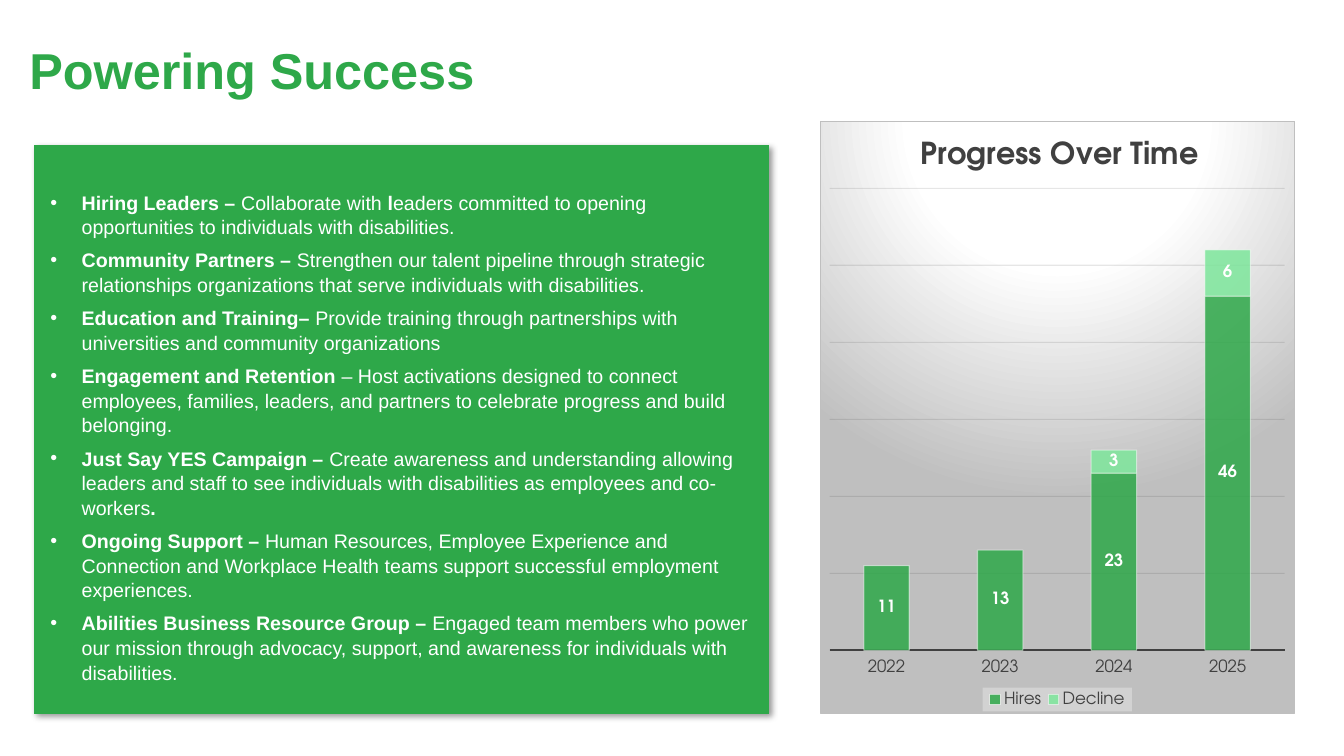
from lxml import etree
from pptx import Presentation
from pptx.chart.data import CategoryChartData
from pptx.dml.color import RGBColor
from pptx.enum.chart import XL_CHART_TYPE, XL_LABEL_POSITION, XL_LEGEND_POSITION, XL_TICK_LABEL_POSITION, XL_TICK_MARK
from pptx.enum.shapes import MSO_SHAPE
from pptx.oxml import parse_xml
from pptx.oxml.ns import nsdecls, qn
from pptx.util import Inches, Pt

STACKED = XL_CHART_TYPE.COLUMN_STACKED
CENTER = XL_LABEL_POSITION.CENTER
BOTTOM = XL_LEGEND_POSITION.BOTTOM
LOW = XL_TICK_LABEL_POSITION.LOW
NO_TICK = XL_TICK_MARK.NONE
PROCESS = MSO_SHAPE.FLOWCHART_PROCESS

GREEN = RGBColor(0x2E, 0xA8, 0x49)
MINT = RGBColor(0x7D, 0xE6, 0x9B)
WHITE = RGBColor(0xFF, 0xFF, 0xFF)
BLACK = RGBColor(0, 0, 0)
CHARCOAL = RGBColor(0x40, 0x40, 0x40)
GRID = RGBColor(0x0D, 0x0D, 0x0D)

TITLE = "Powering Success"
# Runs alternate between bold and regular.
BULLETS = [
    ("Hiring Leaders – ", "Collaborate with ", "l",
     "eaders committed to opening opportunities to individuals with disabilities."),
    ("Community Partners – ",
     "Strengthen our talent pipeline through strategic relationships organizations that serve individuals with disabilities."),
    ("Education and Training– ",
     "Provide training through partnerships with universities and community organizations"),
    ("Engagement and Retention ",
     "– Host activations designed to connect employees, families, leaders, and partners to celebrate progress and build belonging."),
    ("Just Say YES Campaign – ",
     "Create awareness and understanding allowing leaders and staff to see individuals with disabilities as employees and co-workers",
     "."),
    ("Ongoing Support – ",
     "Human Resources, Employee Experience and Connection and Workplace Health teams support successful employment experiences."),
    ("Abilities Business Resource Group – ",
     "Engaged team members who power our mission through advocacy, support, and awareness for individuals with disabilities."),
]
CHART_TITLE = "Progress Over Time"
YEARS = ["2022", "2023", "2024", "2025"]
SERIES = [("Hires", (11, 13, 23, 46), GREEN), ("Decline", (None, None, 3, 6), MINT)]

TITLE_FONT = {"name": "Arial", "size": Pt(36), "bold": True}
BODY_FONT = {"name": "Arial", "size": Pt(14)}
CHART_FONT = {"name": "TeX Gyre Adventor", "size": Pt(10)}
AXIS_FONT = {**CHART_FONT, "size": Pt(12), "bold": False}
LABEL_FONT = {**AXIS_FONT, "bold": True}
HEADING_FONT = {**CHART_FONT, "size": Pt(21.6), "bold": True}
FRAME = {"word_wrap": True, "margin_left": 0, "margin_right": 0, "margin_top": 0, "margin_bottom": 0}


def assign(target, values):
    for name, value in values.items():
        setattr(target, name, value)


def style(font, values, color):
    assign(font, values)
    font.color.rgb = color


def add_text(page, *place):
    frame = page.shapes.add_textbox(*map(Inches, place)).text_frame
    assign(frame, FRAME)
    return frame


def set_alpha(element, *percents):
    for color, percent in zip(element.iter(qn("a:srgbClr")), percents):
        etree.SubElement(color, qn("a:alpha"), val=str(percent * 1000))


def set_layout(parent, after, inner=False, **fractions):
    for old in parent.findall(qn("c:layout")):
        parent.remove(old)
    layout = etree.Element(qn("c:layout"))
    manual = etree.SubElement(layout, qn("c:manualLayout"))
    if inner:
        etree.SubElement(manual, qn("c:layoutTarget"), val="inner")
    for side in "xy":
        etree.SubElement(manual, qn(f"c:{side}Mode"), val="edge")
    for side, fraction in fractions.items():
        etree.SubElement(manual, qn(f"c:{side}"), val=str(fraction))
    if after is None:
        parent.insert(0, layout)
    else:
        parent.find(qn(after)).addnext(layout)


def add_panel(page):
    panel = page.shapes.add_shape(PROCESS, *map(Inches, (0.34, 1.44, 7.29, 5.64)))
    panel.fill.solid()
    panel.fill.fore_color.rgb = GREEN
    panel.line.fill.background()
    panel.shadow.inherit = False
    effects = panel.element.spPr.find(qn("a:effectLst"))
    shadow = etree.SubElement(effects, qn("a:outerShdw"), blurRad=str(Pt(4)), dist=str(Pt(3)),
                              dir="2700000", algn="tl", rotWithShape="0")
    etree.SubElement(shadow, qn("a:srgbClr"), val="000000")
    set_alpha(shadow, 40)


def add_bullets(page):
    frame = add_text(page, 0.5, 1.88, 6.94, 4.83)
    for index, pieces in enumerate(BULLETS):
        para = frame.paragraphs[0] if index == 0 else frame.add_paragraph()
        assign(para, {"space_after": Pt(6), "line_spacing": 1.05})
        properties = para._p.get_or_add_pPr()
        properties.set("marL", str(Inches(0.31)))
        properties.set("indent", str(Inches(-0.31)))
        etree.SubElement(properties, qn("a:buFont"), typeface="Arial")
        etree.SubElement(properties, qn("a:buChar"), char="•")
        for position, text in enumerate(pieces):
            span = para.add_run()
            span.text = text
            style(span.font, {**BODY_FONT, "bold": position % 2 == 0}, WHITE)


def add_progress_chart(page):
    data = CategoryChartData()
    data.categories = YEARS
    for name, values, _ in SERIES:
        data.add_series(name, values)
    chart = page.shapes.add_chart(STACKED, *map(Inches, (8.13, 1.2, 4.71, 5.88)), data).chart
    style(chart.font, CHART_FONT, BLACK)

    chart.has_title = True
    heading = chart.chart_title.text_frame
    heading.text = CHART_TITLE
    style(heading.paragraphs[0].runs[0].font, HEADING_FONT, CHARCOAL)
    chart.has_legend = True
    assign(chart.legend, {"position": BOTTOM, "include_in_layout": False})
    style(chart.legend.font, AXIS_FONT, CHARCOAL)

    years = chart.category_axis
    assign(years, {"major_tick_mark": NO_TICK, "minor_tick_mark": NO_TICK, "tick_label_position": LOW})
    style(years.tick_labels.font, AXIS_FONT, CHARCOAL)
    years.format.line.color.rgb = CHARCOAL
    years.format.line.width = Pt(1.5)
    scale = chart.value_axis
    assign(scale, {"minimum_scale": 0, "maximum_scale": 60, "major_unit": 10,
                   "has_major_gridlines": True, "visible": False})
    grid = scale.major_gridlines.format.line
    grid.color.rgb = GRID
    grid.width = Pt(0.75)

    plot = chart.plots[0]
    assign(plot, {"gap_width": 150, "overlap": 100, "vary_by_categories": False})
    for series, (_, _, color) in zip(plot.series, SERIES):
        series.format.fill.solid()
        series.format.fill.fore_color.rgb = color
        series.format.line.color.rgb = WHITE
        series.format.line.width = Pt(0.75)
        labels = series.data_labels
        assign(labels, {"show_value": True, "position": CENTER})
        style(labels.font, LABEL_FONT, WHITE)

    space = chart.element
    for bars in space.iter(qn("c:ser")):
        set_alpha(bars.find(qn("c:spPr")), 85, 50)
    set_alpha(next(space.iter(qn("c:majorGridlines"))), 10)

    body = space.find(qn("c:chart"))
    legend = body.find(qn("c:legend"))
    set_layout(body.find(qn("c:title")), "c:tx", x=0.2, y=0.02)
    set_layout(body.find(qn("c:plotArea")), None, inner=True, x=0.02, y=0.113, w=0.96, h=0.781)
    set_layout(legend, "c:legendPos", x=0.343, y=0.957, w=0.315, h=0.04)
    legend.find(qn("c:overlay")).addnext(parse_xml(
        f'<c:spPr {nsdecls("c", "a")}><a:solidFill><a:srgbClr val="F2F2F2"><a:alpha val="39000"/>'
        '</a:srgbClr></a:solidFill></c:spPr>'))
    body.addnext(parse_xml(
        f'<c:spPr {nsdecls("c", "a")}><a:gradFill><a:gsLst>'
        '<a:gs pos="0"><a:srgbClr val="FFFFFF"/></a:gs>'
        '<a:gs pos="39000"><a:srgbClr val="FFFFFF"/></a:gs>'
        '<a:gs pos="100000"><a:srgbClr val="BFBFBF"/></a:gs></a:gsLst>'
        '<a:path path="circle"><a:fillToRect l="50000" t="-80000" r="50000" b="180000"/></a:path>'
        '</a:gradFill><a:ln w="9525"><a:solidFill><a:srgbClr val="BFBFBF"/></a:solidFill></a:ln></c:spPr>'))


def main():
    deck = Presentation()
    assign(deck, {"slide_width": Inches(13.33), "slide_height": Inches(7.5)})
    page = deck.slides.add_slide(deck.slide_layouts[6])
    title = add_text(page, 0.29, 0.36, 8.38, 1.01).paragraphs[0]
    title.line_spacing = 1.05
    title.text = TITLE
    style(title.runs[0].font, TITLE_FONT, GREEN)
    add_panel(page)
    add_bullets(page)
    add_progress_chart(page)
    deck.save("out.pptx")


if __name__ == "__main__":
    main()
